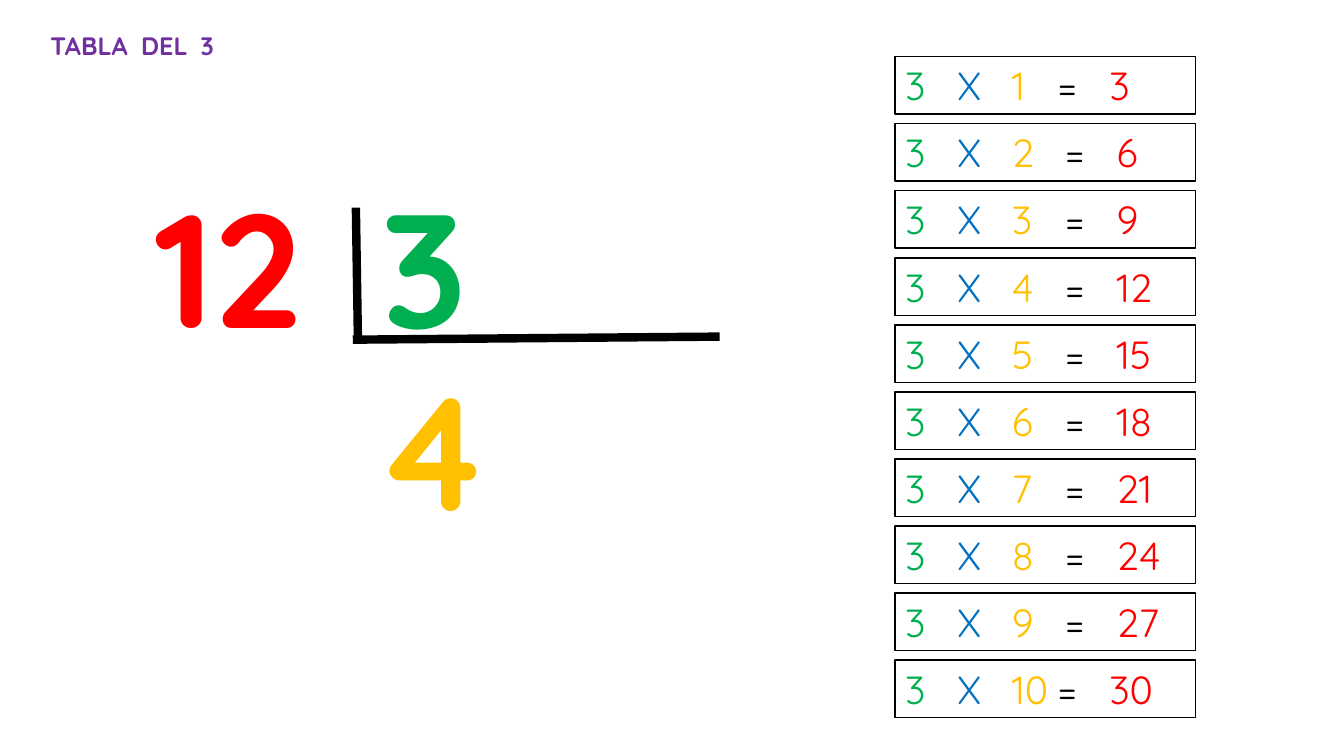
import pptx
import pptx.util
import pptx.dml.color
import pptx.enum.shapes
import pptx.enum.text
import pptx.oxml
import pptx.oxml.ns

GREEN, BLUE, YELLOW, RED = "00B050", "0070C0", "FFC000", "FF0000"
BLACK, WHITE, PURPLE = "000000", "FFFFFF", "7030A0"


def rgb(hex_code):
    return pptx.dml.color.RGBColor.from_string(hex_code)


class DivisionSlide:
    """Draws on one slide, with lengths as percentages of its size."""

    font = "Quicksand"

    def __init__(self, deck):
        self.width, self.height = deck.slide_width, deck.slide_height
        self.slide = deck.slides.add_slide(deck.slide_layouts[5])

    def place(self, *shares):
        sizes = (self.width, self.height) * 2
        return [round(size * share / 100) for size, share in zip(sizes, shares)]

    def fill_text(self, holder, pieces, size, bold=False, align="LEFT", stops=()):
        frame = holder.text_frame
        frame_format = {
            "word_wrap": True,
            "auto_size": pptx.enum.text.MSO_AUTO_SIZE.SHAPE_TO_FIT_TEXT,
            "vertical_anchor": pptx.enum.text.MSO_ANCHOR.TOP,
        }
        for key, value in frame_format.items():
            setattr(frame, key, value)
        paragraph = frame.paragraphs[0]
        paragraph.alignment = getattr(pptx.enum.text.PP_ALIGN, align)
        paragraph.line_spacing = 1.0
        if stops:
            properties = paragraph._p.get_or_add_pPr()
            tab_list = pptx.oxml.parse_xml(f"<a:tabLst {pptx.oxml.ns.nsdecls('a')}/>")
            properties.append(tab_list)
            for stop in stops:
                tab = tab_list.makeelement(pptx.oxml.ns.qn("a:tab"))
                tab.set("pos", str(round(self.width * stop / 100)))
                tab.set("algn", "l")
                tab_list.append(tab)
        font_format = {"name": self.font, "size": pptx.util.Pt(size), "bold": bold}
        for words, color in pieces:
            run = paragraph.add_run()
            run.text = words
            for key, value in font_format.items():
                setattr(run.font, key, value)
            run.font.color.rgb = rgb(color)

    def title(self, words, area, color, stops):
        heading = self.slide.shapes.title
        for key, value in zip(("left", "top", "width", "height"), self.place(*area)):
            setattr(heading, key, value)
        self.fill_text(heading, [(words, color)], 18, bold=True, stops=stops)

    def number(self, digits, area, color):
        label = self.slide.shapes.add_textbox(*self.place(*area))
        self.fill_text(label, [(digits, color)], 115, bold=True, align="CENTER")

    def bar(self, *ends):
        stroke = self.slide.shapes.add_connector(
            pptx.enum.shapes.MSO_CONNECTOR.STRAIGHT, *self.place(*ends))
        stroke.line.color.rgb = rgb(BLACK)
        stroke.line.width = pptx.util.Pt(6)
        effects = f"<a:effectLst {pptx.oxml.ns.nsdecls('a')}/>"
        stroke._element.spPr.append(pptx.oxml.parse_xml(effects))

    def product(self, area, pieces, stops):
        card = self.slide.shapes.add_shape(
            pptx.enum.shapes.MSO_SHAPE.RECTANGLE, *self.place(*area))
        card.shadow.inherit = False
        card.fill.solid()
        card.fill.fore_color.rgb = rgb(WHITE)
        card.line.color.rgb = rgb(BLACK)
        card.line.width = pptx.util.Pt(1)
        self.fill_text(card, pieces, 28, stops=stops)


def main():
    deck = pptx.Presentation()
    deck.slide_width = pptx.util.Inches(13.33)
    deck.slide_height = pptx.util.Inches(7.5)
    page = DivisionSlide(deck)

    page.title("TABLA\tDEL\t3", (3, 3.33, 19.73, 5.33), PURPLE, (6.75, 11.18))

    page.number("3", (27.15, 21.47, 8.85, 27.2), GREEN)
    page.bar(26.48, 27.47, 26.63, 44.67)
    page.bar(26.25, 44.93, 53.55, 44.53)
    page.number("12", (8.93, 21.47, 16.05, 27.2), RED)
    page.number("4", (27.23, 45.73, 8.85, 27.2), YELLOW)

    top, pitch = 7.5, 8.87
    for factor in range(1, 11):
        shift = 0.55 if factor in (1, 10) else 0
        pieces = [("3\t", GREEN), ("X\t", BLUE), (str(factor), YELLOW),
                  ("\t=\t", BLACK), (str(3 * factor), RED)]
        page.product((66.6, top + (factor - 1) * pitch, 22.35, 7.6), pieces,
                     (3.9, 7.95, 11.93 - shift, 15.75 - shift))

    deck.save("out.pptx")


if __name__ == "__main__":
    main()
